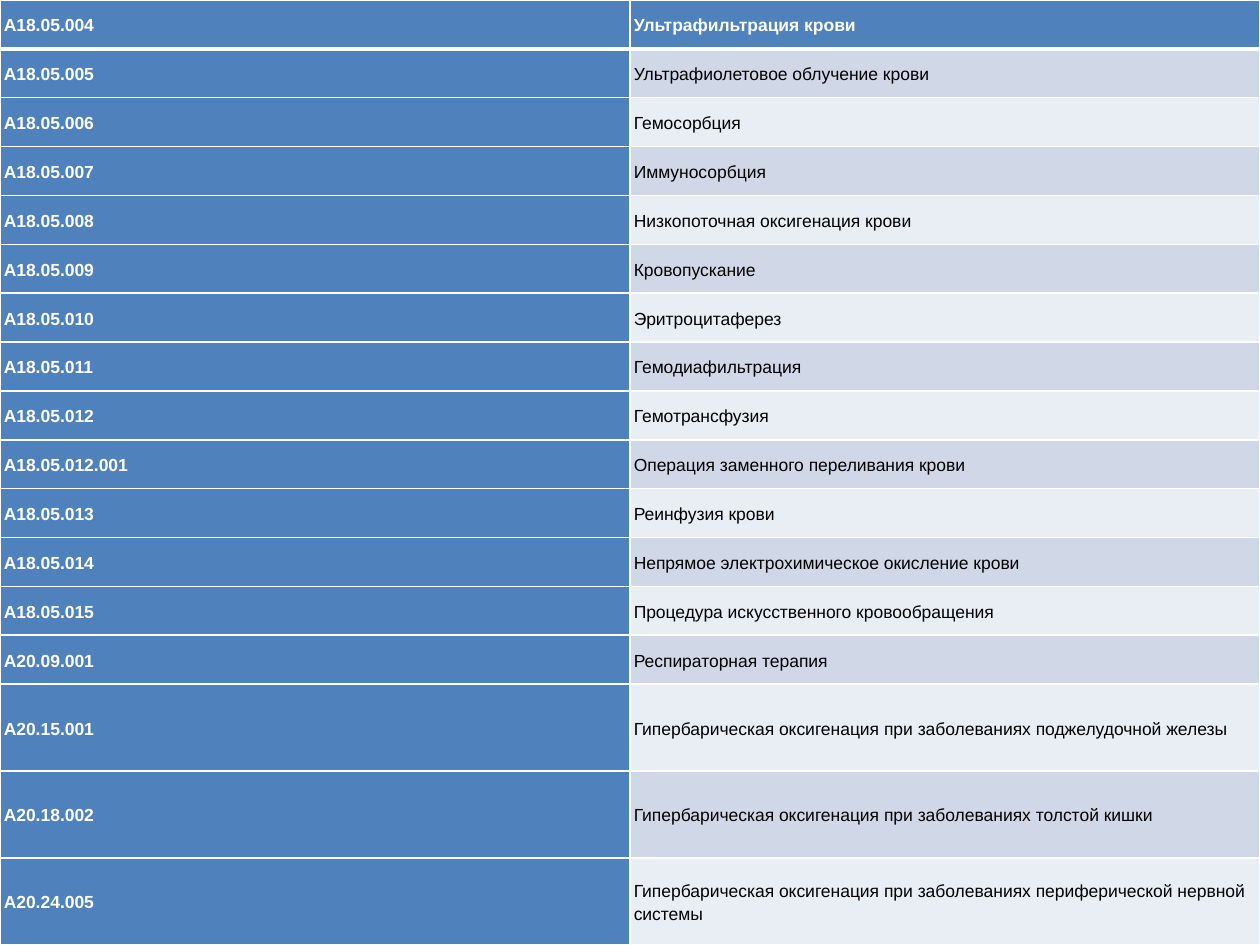
from dataclasses import dataclass

from lxml import etree
from pptx import Presentation
from pptx.dml.color import RGBColor
from pptx.enum import text as t
from pptx.oxml import ns
from pptx.util import Inches, Pt


@dataclass(frozen=True)
class Theme:
    font: str = "Arial"
    size: float = 10
    head: str = "4F81BD"
    bands: tuple = ("E9EDF4", "D0D8E8")
    light: str = "FFFFFF"
    dark: str = "000000"
    thin: float = 1
    thick: float = 3


THEME = Theme()
WIDTH, HEIGHT = 10, 7.5
TALL, PAD = 0.69, 0.03
TALL_ROWS = 3

ROWS = [
    ("A18.05.004", "Ультрафильтрация крови"),
    ("A18.05.005", "Ультрафиолетовое облучение крови"),
    ("A18.05.006", "Гемосорбция"),
    ("A18.05.007", "Иммуносорбция"),
    ("A18.05.008", "Низкопоточная оксигенация крови"),
    ("A18.05.009", "Кровопускание"),
    ("A18.05.010", "Эритроцитаферез"),
    ("A18.05.011", "Гемодиафильтрация"),
    ("A18.05.012", "Гемотрансфузия"),
    ("A18.05.012.001", "Операция заменного переливания крови"),
    ("A18.05.013", "Реинфузия крови"),
    ("A18.05.014", "Непрямое электрохимическое окисление крови"),
    ("A18.05.015", "Процедура искусственного кровообращения"),
    ("A20.09.001", "Респираторная терапия"),
    ("A20.15.001", "Гипербарическая оксигенация при заболеваниях поджелудочной железы"),
    ("A20.18.002", "Гипербарическая оксигенация при заболеваниях толстой кишки"),
    ("A20.24.005", "Гипербарическая оксигенация при заболеваниях периферической нервной системы"),
]


def write(frame, words, color=THEME.dark, bold=False, size=THEME.size):
    para = frame.paragraphs[0]
    para.line_spacing = 1.15
    para.space_after = Pt(10)
    run = para.add_run()
    run.text = words
    font = run.font
    font.name, font.size, font.bold = THEME.font, Pt(size), bold
    font.color.rgb = RGBColor.from_string(color)


def border(cell, **widths):
    props = cell._tc.get_or_add_tcPr()
    for side in "LRTB":
        width = widths.get(side, THEME.thin)
        line = etree.SubElement(props, ns.qn(f"a:ln{side}"), w=str(Pt(width)))
        fill = etree.SubElement(line, ns.qn("a:solidFill"))
        etree.SubElement(fill, ns.qn("a:srgbClr"), val=THEME.light)


def style(cell, fill, **widths):
    cell.margin_left = cell.margin_right = Inches(PAD)
    cell.margin_top = cell.margin_bottom = Inches(PAD)
    cell.vertical_anchor = t.MSO_ANCHOR.MIDDLE
    border(cell, **widths)
    cell.fill.solid()
    cell.fill.fore_color.rgb = RGBColor.from_string(fill)


def code_table(slide, left, top, width, height):
    box = [Inches(v) for v in (left, top, width, height)]
    table = slide.shapes.add_table(len(ROWS), 2, *box).table
    table.first_col = True
    for col in table.columns:
        col.width = Inches(width / 2)
    short_rows = len(ROWS) - TALL_ROWS
    short = (height - TALL_ROWS * TALL) / short_rows
    for i, row in enumerate(ROWS):
        table.rows[i].height = Inches(short if i < short_rows else TALL)
        edges = {0: {"B": THEME.thick}, 1: {"T": THEME.thick}}.get(i, {})
        for j, words in enumerate(row):
            cell = table.cell(i, j)
            head = i == 0 or j == 0
            style(cell, THEME.head if head else THEME.bands[i % 2], **edges)
            write(cell.text_frame, words, bold=head,
                  color=THEME.light if head else THEME.dark)


def main():
    deck = Presentation()
    deck.slide_width, deck.slide_height = Inches(WIDTH), Inches(HEIGHT)
    slide = deck.slides.add_slide(deck.slide_layouts[6])
    code_table(slide, 0, 0, WIDTH, HEIGHT)
    deck.save("out.pptx")


if __name__ == "__main__":
    main()
